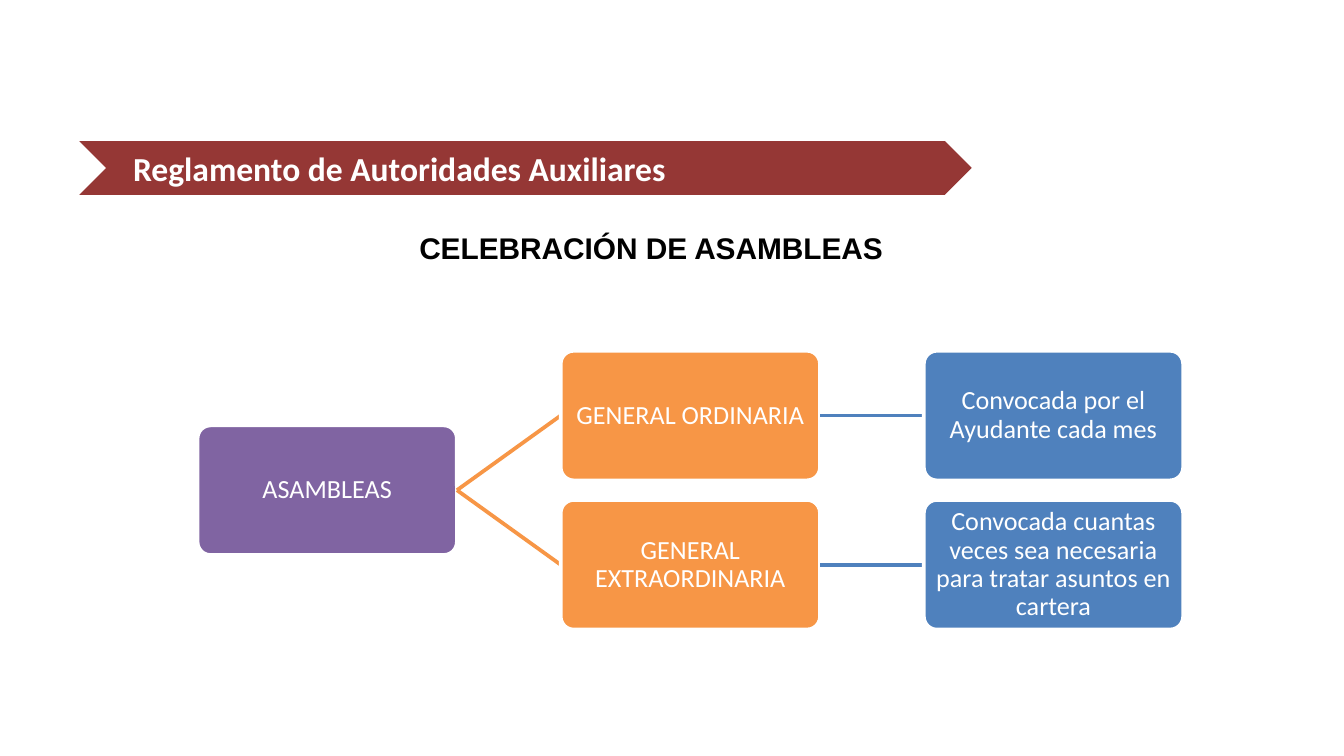
"""Build the slide on the two kinds of assembly."""
from lxml import etree
from pptx import Presentation, util as u
from pptx.dml.color import RGBColor
from pptx.enum import shapes as s, text as t
from pptx.oxml.ns import qn

WHITE, PLUM, GOLD, BLUE = "FFFFFF", "8064A2", "F79646", "4F81BD"
LEFT, TOP, WIDE = 1.47, 2.61, 1.93
HIGH = WIDE / 2
COL, ROW = WIDE * 1.4, HIGH * 1.15


def tint(part, code):
    if hasattr(part, "solid"):
        part.solid()
        part.fore_color.rgb = RGBColor.from_string(code)
    else:
        part.color.rgb = RGBColor.from_string(code)


def write(shape, words, pads, font, form, code):
    frame = shape.text_frame
    frame.word_wrap = True
    frame.vertical_anchor = t.MSO_ANCHOR.MIDDLE
    for side, pad in zip(("left", "top", "right", "bottom"), pads):
        setattr(frame, f"margin_{side}", u.Inches(pad))
    para = frame.paragraphs[0]
    para.text = words
    for key, val in form.items():
        setattr(para, key, val)
    for key, val in font.items():
        setattr(para.runs[0].font, key, val)
    tint(para.runs[0].font, code)


deck = Presentation()
deck.slide_width = u.Inches(10)
deck.slide_height = deck.slide_width * 9 // 16
slide = deck.slides.add_slide(deck.slide_layouts[6])
draw = slide.shapes

band = draw.add_shape(s.MSO_SHAPE.CHEVRON, *map(u.Inches, (0.59, 1.05, 6.64, 0.4)))
band.shadow.inherit = False
tint(band.fill, "953735")
band.line.fill.background()
write(band, "Reglamento de Autoridades Auxiliares", (0.2, 0.05, 0.1, 0.05),
      {"name": "Calibri", "size": u.Pt(18), "bold": True},
      {"alignment": t.PP_ALIGN.LEFT}, WHITE)

head = draw.add_textbox(*map(u.Inches, (3.11, 1.7, 3.78, 0.28)))
write(head, "CELEBRACIÓN DE ASAMBLEAS", (0.01, 0.01, 0, 0),
      {"name": "Arial", "size": u.Pt(16), "bold": True},
      {"alignment": t.PP_ALIGN.JUSTIFY}, "000000")

nodes = [
    ("ASAMBLEAS", 0, 0.5, PLUM, None),
    ("GENERAL ORDINARIA", 1, 0, GOLD, 0),
    ("Convocada por el Ayudante cada mes", 2, 0, BLUE, 1),
    ("GENERAL EXTRAORDINARIA", 1, 1, GOLD, 0),
    ("Convocada cuantas veces sea necesaria para tratar asuntos en cartera",
     2, 1, BLUE, 3),
]
boxes = []
for words, col, row, code, root in nodes:
    spot = (LEFT + col * COL, TOP + row * ROW, WIDE, HIGH)
    box = draw.add_shape(s.MSO_SHAPE.ROUNDED_RECTANGLE, *map(u.Inches, spot))
    box.adjustments[0] = 0.1
    box.shadow.inherit = False
    tint(box.fill, code)
    tint(box.line, WHITE)
    box.line.width = u.Pt(2)
    write(box, words, (0.04,) * 4, {"name": "Calibri", "size": u.Pt(14)},
          {"alignment": t.PP_ALIGN.CENTER, "line_spacing": 0.9}, WHITE)
    boxes.append(box)
    if root is not None:
        link = draw.add_connector(s.MSO_CONNECTOR.STRAIGHT, 0, 0, 0, 0)
        link.begin_connect(boxes[root], 3)
        link.end_connect(box, 1)
        tint(link.line, code)
        link.line.width = u.Pt(2)
        etree.SubElement(link._element.spPr, qn("a:effectLst"))
        box._element.addprevious(link._element)

deck.save("out.pptx")
